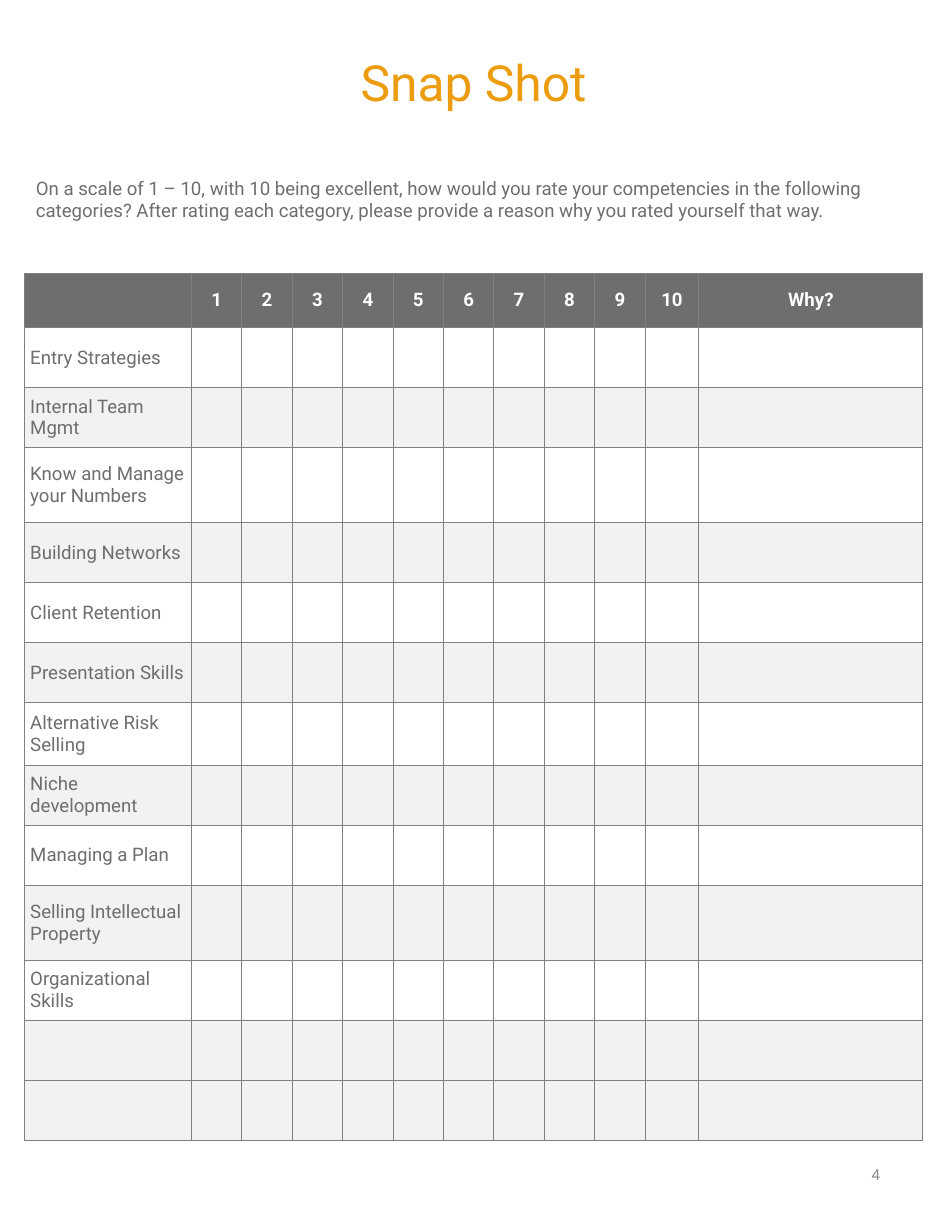
from lxml import etree
from pptx import Presentation
from pptx import util as u
from pptx.dml.color import RGBColor
from pptx.enum import text
from pptx.oxml import ns

COLOURS = {
    "title": "EB9C0F",
    "body": "6E6E6E",
    "band": "F2F2F2",
    "border": "808080",
    "number": "888888",
    "white": "FFFFFF",
}
LEFT, CENTRE, RIGHT = text.PP_ALIGN.LEFT, text.PP_ALIGN.CENTER, text.PP_ALIGN.RIGHT
MIDDLE, TOP = text.MSO_ANCHOR.MIDDLE, text.MSO_ANCHOR.TOP


class Sheet:
    """Holds the style and the slide; lengths are columns and rows of an 85 x 110 grid."""

    COLUMNS, ROWS = 85, 110
    INSET = u.Inches(0.05)

    def __init__(self, presentation):
        self.column = presentation.slide_width / self.COLUMNS
        self.row = presentation.slide_height / self.ROWS
        self.slide = presentation.slides.add_slide(presentation.slide_layouts[6])

    def across(self, columns):
        return u.Emu(round(columns * self.column))

    def down(self, rows):
        return u.Emu(round(rows * self.row))

    def box(self, left, top, width, height):
        return self.across(left), self.down(top), self.across(width), self.down(height)

    def add_words(self, paragraph, words, size=12, colour="body", align=LEFT,
                  bold=False, font="Roboto"):
        paragraph.alignment = align
        run = paragraph.add_run()
        run.text = words
        run.font.name, run.font.size, run.font.bold = font, u.Pt(size), bold
        run.font.color.rgb = RGBColor.from_string(COLOURS[colour])

    def set_insets(self, holder):
        holder.margin_left = holder.margin_right = self.INSET
        holder.margin_top = holder.margin_bottom = self.INSET

    def text(self, place, words, anchor=TOP, wrap=True, spacing=None, **style):
        frame = self.slide.shapes.add_textbox(*self.box(*place)).text_frame
        self.set_insets(frame)
        frame.word_wrap, frame.vertical_anchor = wrap, anchor
        paragraph = frame.paragraphs[0]
        paragraph.line_spacing = spacing
        self.add_words(paragraph, words, **style)

    def borders(self, cell):
        properties = cell._tc.get_or_add_tcPr()
        for index, side in enumerate(("lnL", "lnR", "lnT", "lnB")):
            line = etree.Element(ns.qn(f"a:{side}"), w=str(u.Pt(0.75)))
            fill = etree.SubElement(line, ns.qn("a:solidFill"))
            etree.SubElement(fill, ns.qn("a:srgbClr"), val=COLOURS["border"])
            properties.insert(index, line)

    def cell(self, cell, words, fill=None, **style):
        self.set_insets(cell)
        cell.vertical_anchor = MIDDLE
        if fill:
            cell.fill.solid()
            cell.fill.fore_color.rgb = RGBColor.from_string(COLOURS[fill])
        else:
            cell.fill.background()
        self.borders(cell)
        if words:
            self.add_words(cell.text_frame.paragraphs[0], words, **style)

    def table(self, left, top, widths, heights, header, labels, banded):
        place = self.box(left, top, sum(widths), sum(heights))
        table = self.slide.shapes.add_table(len(heights), len(widths), *place).table
        table.first_row = table.horz_banding = False
        for column, width in zip(table.columns, widths):
            column.width = self.across(width)
        for row, height in zip(table.rows, heights):
            row.height = self.down(height)
        # Header row
        for index, words in enumerate(header):
            self.cell(table.cell(0, index), words, "body",
                      colour="white", align=CENTRE, bold=True)
        # Category rows, with empty cells to fill in
        for row, label in enumerate(labels, start=1):
            for column in range(len(widths)):
                self.cell(table.cell(row, column), "" if column else label,
                          "band" if row in banded else None)


def main():
    presentation = Presentation()
    presentation.slide_width, presentation.slide_height = u.Inches(8.5), u.Inches(11)
    sheet = Sheet(presentation)

    # Page number
    sheet.text((77.2, 103.6, 1.9, 2.5), "4", anchor=MIDDLE, wrap=False,
               size=10, colour="number", align=RIGHT, font="Arial")

    # Instructions and title
    sheet.text((2.7, 15.3, 79.6, 4.9),
               "On a scale of 1 – 10, with 10 being excellent, how would you rate your "
               "competencies in the following categories? After rating each category, "
               "please provide a reason why you rated yourself that way.")
    sheet.text((4.2, 4.5, 76.2, 6.3), "Snap Shot", anchor=MIDDLE, spacing=0.9,
               size=32, colour="title", align=CENTRE)

    # Rating table
    categories = [
        "Entry Strategies", "Internal Team Mgmt", "Know and Manage your Numbers",
        "Building Networks", "Client Retention", "Presentation Skills",
        "Alternative Risk Selling", "Niche development", "Managing a Plan",
        "Selling Intellectual Property", "Organizational Skills", "", "",
    ]
    last = len(categories)
    taller = {3: 6.7, 7: 5.6, 10: 6.7}
    sheet.table(
        2.2, 24.4,
        widths=[14.9] + [4.5] * 9 + [4.8, 20],
        heights=[4.85] + [taller.get(row, 5.36) for row in range(1, last + 1)],
        header=["", *map(str, range(1, 11)), "Why?"],
        labels=categories,
        banded={*range(2, last, 2), last},
    )

    presentation.save("out.pptx")


if __name__ == "__main__":
    main()
